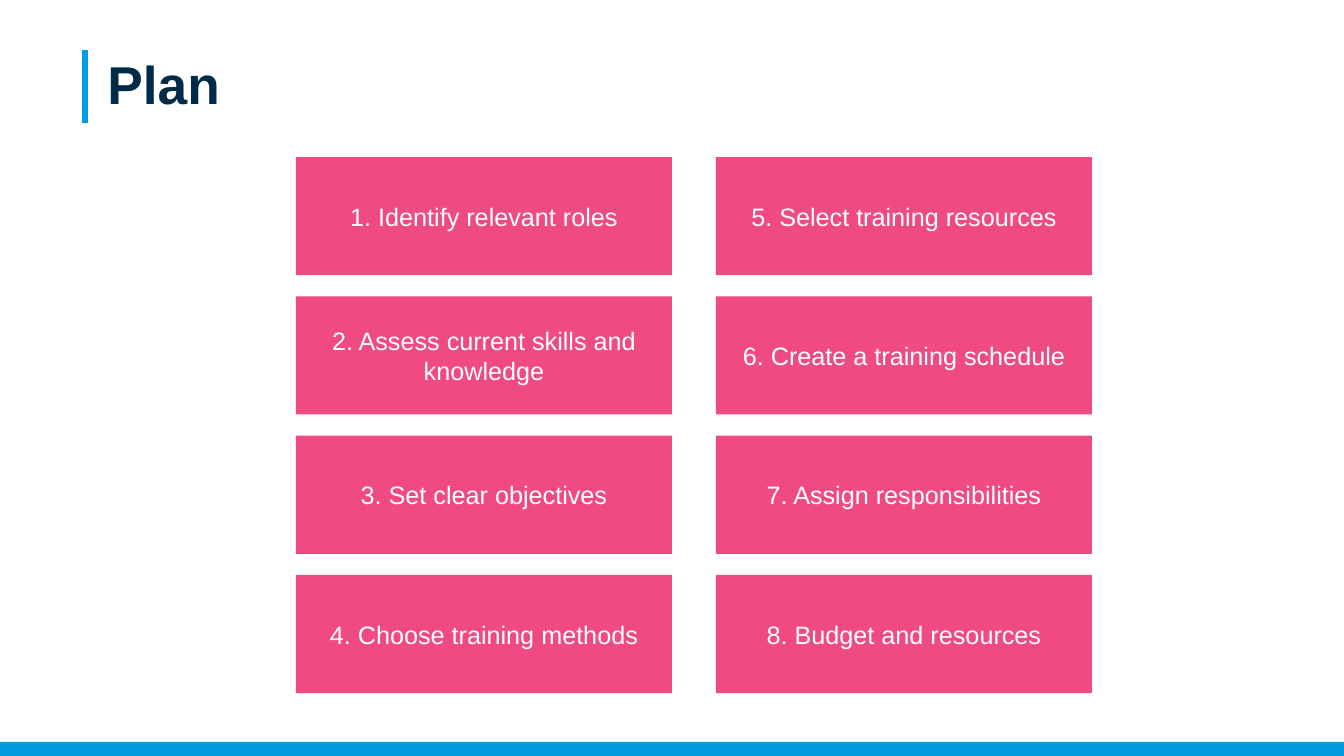
from pptx import Presentation
from pptx.dml.color import RGBColor
from pptx.enum.shapes import MSO_CONNECTOR, MSO_SHAPE
from pptx.enum.text import MSO_ANCHOR, PP_ALIGN
from pptx.oxml.ns import qn
from pptx.util import Pt

TITLE = "Plan"
STEPS = [
    "Identify relevant roles",
    "Assess current skills and knowledge",
    "Set clear objectives",
    "Choose training methods",
    "Select training resources",
    "Create a training schedule",
    "Assign responsibilities",
    "Budget and resources",
]
THEME = {
    "blue": RGBColor.from_string("009CDE"),
    "pink": RGBColor.from_string("EF4B80"),
    "title": {"name": "Arial", "size": Pt(38), "bold": True,
              "color": RGBColor.from_string("002B48")},
    "step": {"name": "Arial", "size": Pt(18), "bold": False,
             "color": RGBColor.from_string("FFFFFF")},
}
WIDTH, HEIGHT = 960, 540
ROWS = 4
LEFT, TOP = 211.4, 112.2
BOX_W, BOX_H = 268.6, 84.4
STEP_X, STEP_Y = 300, 99.5
BAND = 10


def style(font, look):
    for key, value in look.items():
        if key == "color":
            font.color.rgb = value
        else:
            setattr(font, key, value)


def add_rect(slide, left, top, width, height, fill):
    rect = slide.shapes.add_shape(
        MSO_SHAPE.RECTANGLE, Pt(left), Pt(top), Pt(width), Pt(height))
    rect.shadow.inherit = False
    rect.fill.solid()
    rect.fill.fore_color.rgb = fill
    rect.line.fill.background()
    return rect


def add_title(slide):
    bar = slide.shapes.add_connector(
        MSO_CONNECTOR.STRAIGHT, Pt(60.6), Pt(35.5), Pt(60.6), Pt(87.8))
    bar.line.color.rgb = THEME["blue"]
    bar.line.width = Pt(4.5)
    props = bar._element.spPr
    props.append(props.makeelement(qn("a:effectLst"), {}))

    box = slide.shapes.add_textbox(Pt(76.8), Pt(44.5), Pt(817), Pt(80))
    frame = box.text_frame
    frame.word_wrap = True
    for side in ("left", "top", "right", "bottom"):
        setattr(frame, f"margin_{side}", 0)
    para = frame.paragraphs[0]
    para.text = TITLE
    para.line_spacing = Pt(38)
    style(para.font, THEME["title"])


def add_step(slide, index, text):
    col, row = divmod(index, ROWS)
    box = add_rect(slide, LEFT + col * STEP_X, TOP + row * STEP_Y,
                   BOX_W, BOX_H, THEME["pink"])
    frame = box.text_frame
    frame.word_wrap = True
    frame.vertical_anchor = MSO_ANCHOR.MIDDLE
    para = frame.paragraphs[0]
    para.text = f"{index + 1}. {text}"
    para.alignment = PP_ALIGN.CENTER
    style(para.font, THEME["step"])


def main():
    deck = Presentation()
    deck.slide_width, deck.slide_height = Pt(WIDTH), Pt(HEIGHT)
    slide = deck.slides.add_slide(deck.slide_layouts[6])
    add_rect(slide, 0, HEIGHT - BAND, WIDTH, BAND, THEME["blue"])
    add_title(slide)
    for index, text in enumerate(STEPS):
        add_step(slide, index, text)
    deck.save("out.pptx")


if __name__ == "__main__":
    main()
